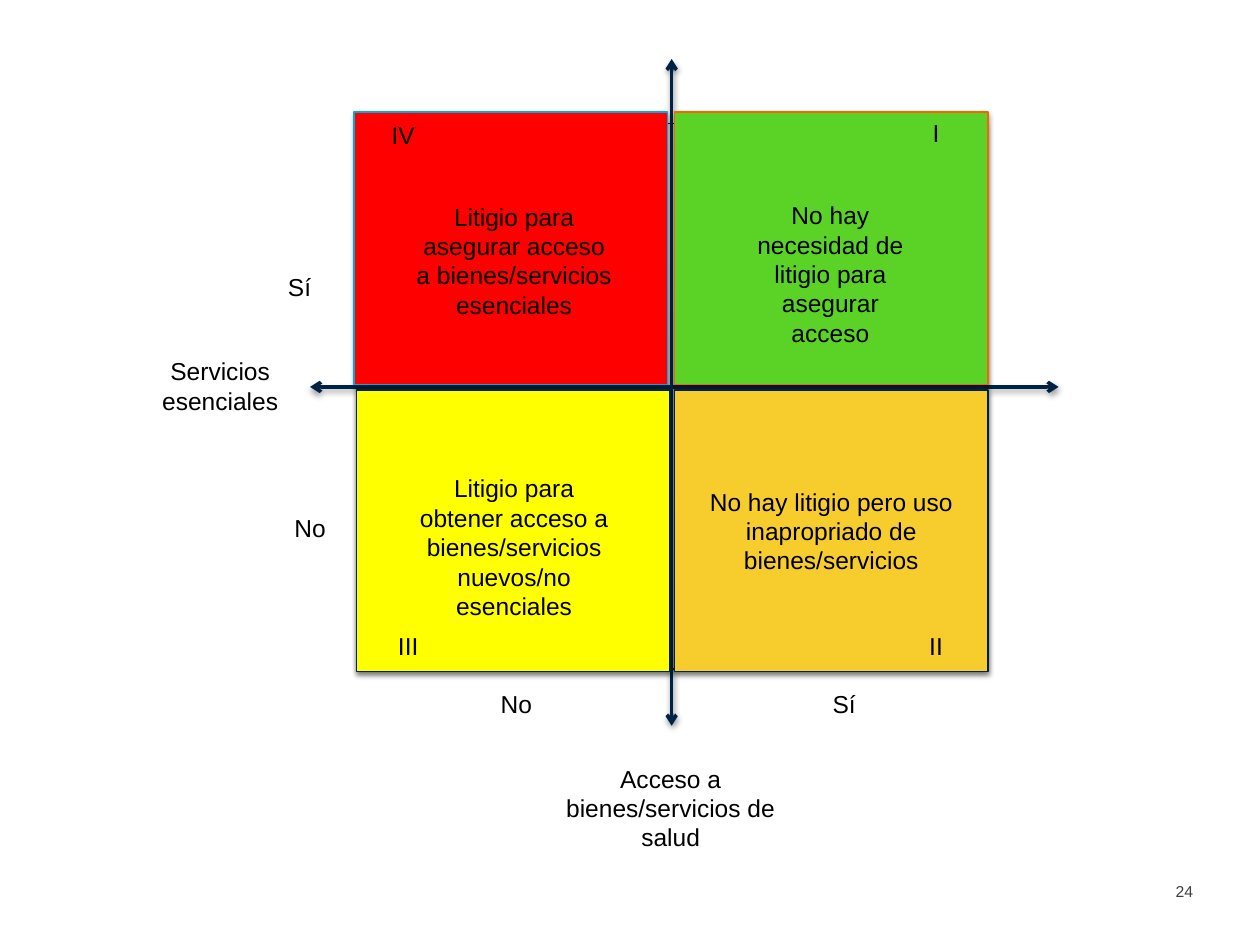
import copy

import pptx
import pptx.dml.color
import pptx.enum.shapes
import pptx.enum.text
import pptx.oxml
import pptx.oxml.ns
import pptx.util

Cm, Pt = pptx.util.Cm, pptx.util.Pt
ALIGN = pptx.enum.text.PP_ALIGN
ANCHOR = pptx.enum.text.MSO_ANCHOR
qn = pptx.oxml.ns.qn

NAVY = "002243"
AXIS = "002345"
LABEL_SIZE = (1.98, 0.86)
QUADRANT_WIDTH = 6.32
SHADOW = (
    f'<a:effectLst {pptx.oxml.ns.nsdecls("a")}>'
    '<a:outerShdw blurRad="39370" dist="20320" dir="5400000" rotWithShape="0">'
    '<a:srgbClr val="000000"><a:alpha val="38000"/></a:srgbClr>'
    '</a:outerShdw></a:effectLst>'
)


def color(value):
    return pptx.dml.color.RGBColor.from_string(value)


def add_shadow(shape):
    shape._element.spPr.append(pptx.oxml.parse_xml(SHADOW))


def write(frame, text, size=14, ink="000000", align=ALIGN.CENTER):
    frame.word_wrap = True
    paragraph = frame.paragraphs[0]
    paragraph.alignment = align
    run = paragraph.add_run()
    run.text = text
    run.font.name = "Arial"
    run.font.size = Pt(size)
    run.font.color.rgb = color(ink)


def add_label(slide, text, left, top, width=LABEL_SIZE[0], height=LABEL_SIZE[1]):
    label = slide.shapes.add_textbox(Cm(left), Cm(top), Cm(width), Cm(height))
    write(label.text_frame, text)


def add_panel(slide, left, top, width, height, outline):
    panel = slide.shapes.add_shape(
        pptx.enum.shapes.MSO_SHAPE.RECTANGLE, Cm(left), Cm(top), Cm(width), Cm(height))
    panel.line.color.rgb = color(outline)
    panel.line.width = Pt(0.75)
    add_shadow(panel)
    return panel


def add_backdrop(slide, left, top, width, height):
    backdrop = add_panel(slide, left, top, width, height, NAVY)
    backdrop.fill.gradient()
    backdrop.fill.gradient_angle = 90
    stop_list = backdrop._element.spPr.find(".//" + qn("a:gsLst"))
    stop_list.append(copy.deepcopy(stop_list[-1]))
    shades = ((0, "B9BBC5"), (0.35, "CED0D6"), (1, "ECEDF0"))
    for stop, (position, shade) in zip(backdrop.fill.gradient_stops, shades):
        stop.position = position
        stop.color.rgb = color(shade)


def add_axis(slide, x1, y1, x2, y2):
    axis = slide.shapes.add_connector(
        pptx.enum.shapes.MSO_CONNECTOR.STRAIGHT, Cm(x1), Cm(y1), Cm(x2), Cm(y2))
    axis.line.color.rgb = color(AXIS)
    axis.line.width = Pt(2)
    outline = axis._element.spPr.find(qn("a:ln"))
    for end in ("a:headEnd", "a:tailEnd"):
        outline.append(pptx.oxml.parse_xml(
            f'<{end} {pptx.oxml.ns.nsdecls("a")} type="arrow"/>'))
    add_shadow(axis)


def add_quadrant(slide, left, top, height, fill, outline, text, text_box=None):
    """text_box is relative to the quadrant; without it the text fills the quadrant."""
    quadrant = add_panel(slide, left, top, QUADRANT_WIDTH, height, outline)
    quadrant.fill.solid()
    quadrant.fill.fore_color.rgb = color(fill)
    if text_box:
        dx, dy, text_width, text_height = text_box
        add_label(slide, text, left + dx, top + dy, text_width, text_height)
    else:
        quadrant.text_frame.vertical_anchor = ANCHOR.MIDDLE
        write(quadrant.text_frame, text)


def add_matrix(slide, left, top, width, height):
    right_column = left + width - QUADRANT_WIDTH
    upper_height, lower_height = 5.49, 5.68
    lower_row = top + height - lower_height

    add_backdrop(slide, left + 0.07, top + 0.23, 12.65, 11)
    add_axis(slide, left - 0.89, top + 5.54, left + 14.2, top + 5.54)
    add_axis(slide, left + 6.4, top - 1.07, left + 6.4, top + 12.37)

    add_label(slide, "Acceso a bienes/servicios de salud", left + 3.88, top + 13.01, 5, 2.06)
    add_label(slide, "Servicios esenciales", left - 4.3, top + 4.8, 3.2, 1.45)
    for answer, dx, dy in (("No", 2.28, 11.51), ("No", -1.88, 7.95),
                           ("Sí", 8.89, 11.51), ("Sí", -2.09, 3.1)):
        add_label(slide, answer, left + dx, top + dy)

    add_quadrant(slide, right_column, top, upper_height, "5AD226", "F96400",
                 "No hay necesidad de litigio para asegurar acceso",
                 (1.22, 1.65, 3.84, 3.25))
    add_quadrant(slide, left, top, upper_height, "FF0000", "00A9DF",
                 "Litigio para asegurar acceso a bienes/servicios esenciales",
                 (0.94, 1.68, 4.57, 2.64))
    add_quadrant(slide, left + 0.05, lower_row, lower_height, "FFFF00", NAVY,
                 "Litigio para obtener acceso a bienes/servicios nuevos/no esenciales",
                 (0.89, 1.56, 4.57, 3.25))
    add_quadrant(slide, right_column, lower_row, lower_height, "F6CD2D", NAVY,
                 "No hay litigio pero uso inapropriado de bienes/servicios")

    for numeral, dx, dy in (("IV", 0, 0.03), ("I", 10.74, 0),
                            ("II", 10.74, 10.34), ("III", 0.1, 10.34)):
        add_label(slide, numeral, left + dx, top + dy)


def add_page_number(slide, number, left, top, width, height):
    page_number = slide.shapes.add_textbox(Cm(left), Cm(top), Cm(width), Cm(height))
    frame = page_number.text_frame
    frame.margin_left = frame.margin_right = frame.margin_bottom = 0
    frame.margin_top = Cm(0.1)
    write(frame, number, 9, "404040", ALIGN.LEFT)


def main():
    deck = pptx.Presentation()
    deck.slide_width, deck.slide_height = Cm(25.4), Cm(19.05)
    slide = deck.slides.add_slide(deck.slide_layouts[6])
    add_page_number(slide, "24", 23.7, 17.68, 0.79, 0.61)
    add_matrix(slide, 7.14, 2.26, 12.78, 11.28)
    deck.save("out.pptx")


if __name__ == "__main__":
    main()
